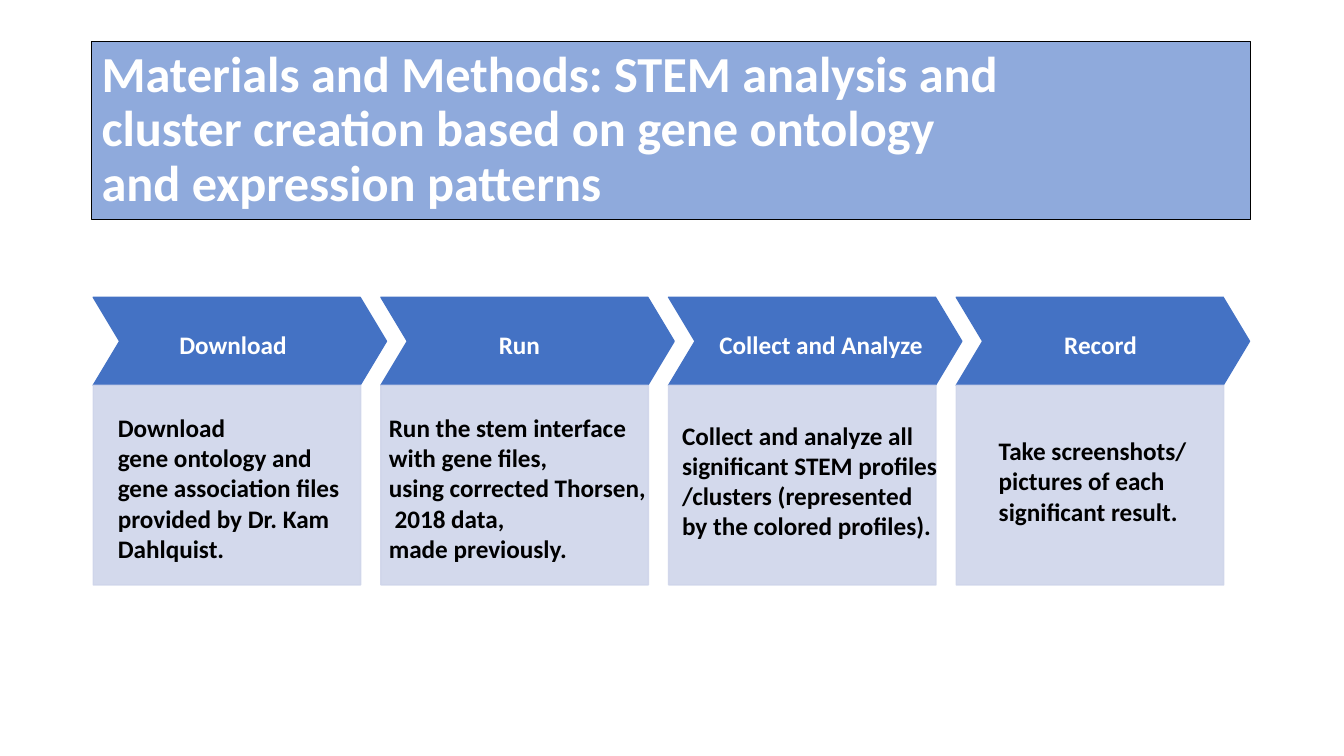
"""Build the STEM analysis methods slide with four process steps."""
import pptx
import pptx.dml.color
import pptx.enum.shapes
import pptx.enum.text
import pptx.oxml.ns
import pptx.util
from lxml import etree

Cm = pptx.util.Cm
Pt = pptx.util.Pt
SHAPE = pptx.enum.shapes.MSO_SHAPE
TEXT = pptx.enum.text

TITLE = "Materials and Methods:~STEM analysis and cluster~creation based on~gene ontology and~expression~patterns"
STEPS = [
    {"label": ("Download", 4.27, 8.18, 7.62, 1.02),
     "note": ("Download gene~ontology and gene~association~files~provided by Dr.~Kam Dahlquist.",
              2.72, 10.26, 6.43, 4.11)},
    {"label": ("Run~", 12.32, 8.18, 2.06, 1.02),
     "note": ("Run the stem~interface with gene~files, using~corrected~Thorsen,~2018 data, made~previously.",
              9.55, 10.26, 7.06, 4.11)},
    {"label": ("Collect and Analyze", 17.88, 8.18, 7.62, 1.02),
     "note": ("Collect and analyze~all significant~STEM~profiles/clusters~(represented by the~colored profiles).",
              16.94, 10.46, 6.99, 3.33)},
    {"label": ("Record", 26.57, 8.18, 7.62, 1.02),
     "note": ("Take~screenshots/pictures~of each significant~result.",
              24.92, 10.85, 5.46, 2.57)},
]
COLORS = {"banner": "8FAADC", "chevron": "4472C4", "panel": "CFD5EA", "white": "FFFFFF", "black": "000000"}
NBSP = chr(160)
LEFT, PITCH = 2.35, 7.25
CHEVRON_TOP, CHEVRON_WIDTH, CHEVRON_HEIGHT = 7.49, 7.39, 2.22
PANEL_WIDTH, PANEL_HEIGHT = 6.74, 5.03


def rgb(name):
    """Return the named colour."""
    return pptx.dml.color.RGBColor.from_string(COLORS[name])


def add_block(s, kind, box, fill, line, width):
    """Add a filled and outlined shape."""
    sp = s.shapes.add_shape(kind, *map(Cm, box))
    sp.shadow.inherit = False
    sp.fill.solid()
    sp.fill.fore_color.rgb = rgb(fill)
    sp.line.color.rgb = rgb(line)
    sp.line.width = Pt(width)
    return sp


def write(sp, text, size, color, spacing, frame):
    """Write one bold paragraph into a shape."""
    tf = sp.text_frame
    for name, value in frame.items():
        setattr(tf, name, value)
    p = tf.paragraphs[0]
    p.alignment = TEXT.PP_ALIGN.LEFT
    p.line_spacing = spacing
    r = p.add_run()
    r.text = text.replace("~", NBSP)
    for name, value in {"name": "Calibri", "size": Pt(size), "bold": True}.items():
        setattr(r.font, name, value)
    r.font.color.rgb = rgb(color)


def main():
    """Lay out the title, the step blocks and their texts."""
    prs = pptx.Presentation()
    prs.slide_width, prs.slide_height = Cm(33.87), Cm(19.05)
    s = prs.slides.add_slide(prs.slide_layouts[6])

    banner = add_block(s, SHAPE.RECTANGLE, (2.31, 1.04, 29.21, 4.5), "banner", "black", 0.75)
    write(banner, TITLE, 36, "white", 0.9,
          {"word_wrap": True, "vertical_anchor": TEXT.MSO_ANCHOR.MIDDLE})

    for i in range(len(STEPS)):
        left = LEFT + i * PITCH
        chevron = add_block(s, SHAPE.CHEVRON, (left, CHEVRON_TOP, CHEVRON_WIDTH, CHEVRON_HEIGHT),
                            "chevron", "chevron", 1)
        chevron.adjustments[0] = 0.3
        panel = add_block(s, SHAPE.RECTANGLE,
                          (left, CHEVRON_TOP + CHEVRON_HEIGHT, PANEL_WIDTH, PANEL_HEIGHT),
                          "panel", "panel", 1)
        for clr in panel.element.spPr.iter(pptx.oxml.ns.qn("a:srgbClr")):
            etree.SubElement(clr, pptx.oxml.ns.qn("a:alpha"), val="90000")

    for part, color in (("label", "white"), ("note", "black")):
        for step in STEPS:
            text, *box = step[part]
            write(s.shapes.add_textbox(*map(Cm, box)), text, 18, color, 1.0,
                  {"word_wrap": True, "auto_size": TEXT.MSO_AUTO_SIZE.SHAPE_TO_FIT_TEXT})

    prs.save("out.pptx")


if __name__ == "__main__":
    main()
